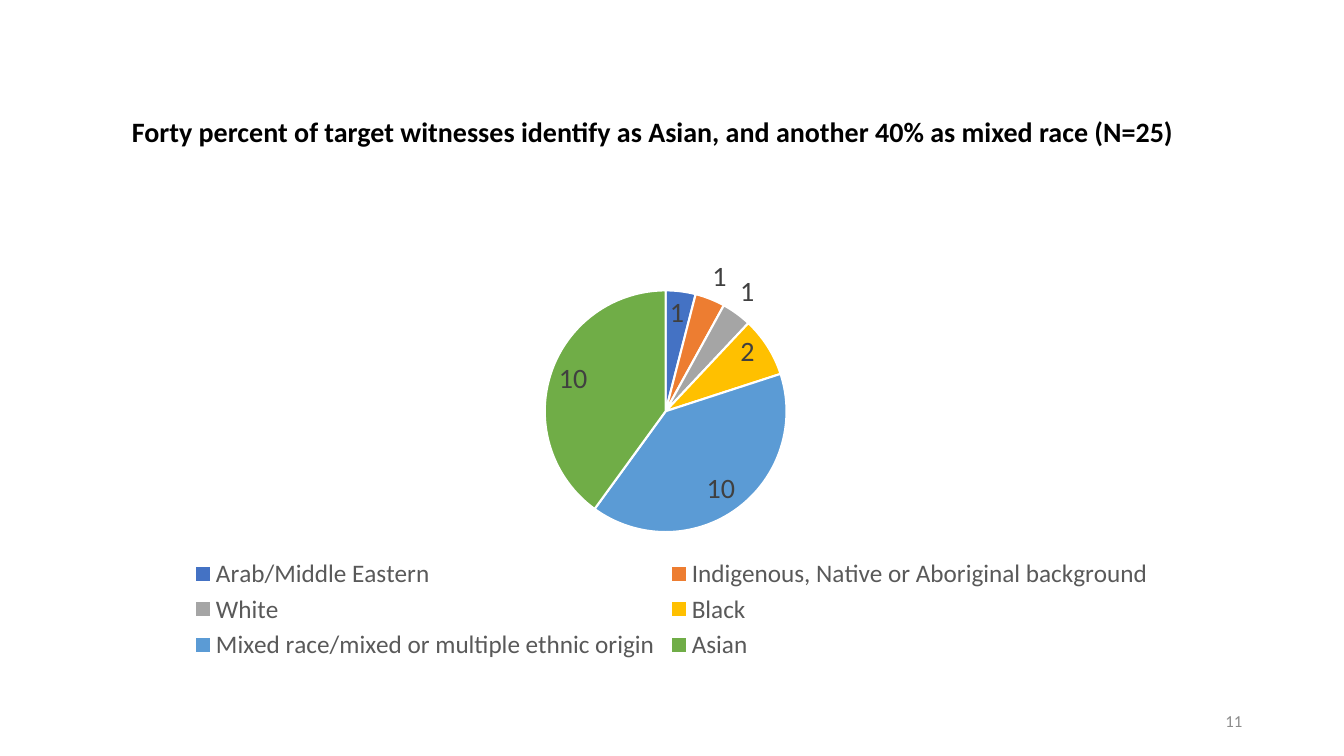
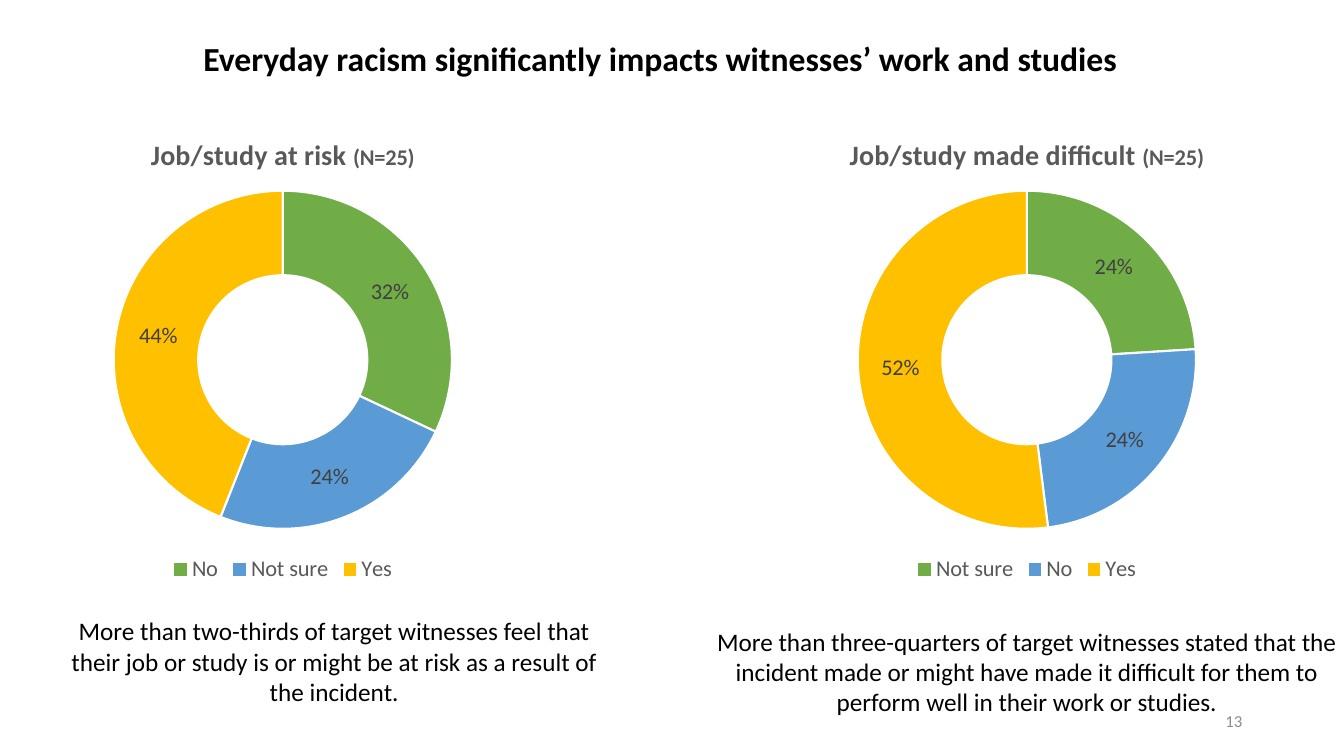
"""Build two slides of survey charts: a pie of witness backgrounds and a pair of doughnuts."""
import pptx
import pptx.chart.data
import pptx.dml.color
import pptx.enum.chart
import pptx.enum.text
import pptx.oxml
import pptx.oxml.ns
import pptx.util

Inches = pptx.util.Inches
Pt = pptx.util.Pt
Anchor = pptx.enum.text.MSO_ANCHOR
Align = pptx.enum.text.PP_ALIGN
ChartType = pptx.enum.chart.XL_CHART_TYPE

FONT = "Calibri"
COLORS = {
    "black": "000000", "white": "FFFFFF", "legend": "595959", "label": "404040", "number": "8C8C8C",
    "indigo": "4472C4", "orange": "ED7D31", "gray": "A5A5A5", "gold": "FFC000",
    "blue": "5B9BD5", "green": "70AD47",
}
NUMBER_BOX = (9.42, 6.95, 3, 0.4)

BACKGROUND = {
    "title": "Forty percent of target witnesses identify as Asian, and another 40% as mixed race (N=25)",
    "box": (0.91, 2.34, 11.5, 4.26),
    "slices": [
        ("Arab/Middle Eastern", 1, "indigo"),
        ("Indigenous, Native or Aboriginal background", 1, "orange"),
        ("White", 1, "gray"),
        ("Black", 2, "gold"),
        ("Mixed race/mixed or multiple ethnic origin", 10, "blue"),
        ("Asian", 10, "green"),
    ],
    "plot": (0.39, 0.127, 0.21, 0.563),
}
IMPACT_TITLE = "Everyday racism significantly impacts witnesses’ work and studies"
IMPACT_PLOT = (0.19, 0.155, 0.62, 0.72)
IMPACTS = [
    {
        "heading": "Job/study at risk ",
        "box": (0.1, 1.17, 5.41, 4.66),
        "slices": [("No", 0.32, "green"), ("Not sure", 0.24, "blue"), ("Yes", 0.44, "gold")],
        "caption": "More than two-thirds of target witnesses feel that their job or study "
                   "is or might be at risk as a result of the incident.",
        "caption_box": (0.51, 6.06, 5.61, 1.01),
    },
    {
        "heading": "Job/study made difficult ",
        "box": (7.48, 1.17, 5.41, 4.66),
        "slices": [("Not sure", 0.24, "green"), ("No", 0.24, "blue"), ("Yes", 0.52, "gold")],
        "caption": "More than three-quarters of target witnesses stated that the incident made "
                   "or might have made it difficult for them to perform well in their work or studies.",
        "caption_box": (6.85, 6.16, 6.67, 1.01),
    },
]


def rgb(name):
    return pptx.dml.color.RGBColor.from_string(COLORS[name])


def style_font(font, size, color, bold=False):
    font.name, font.size, font.bold = FONT, Pt(size), bold
    font.color.rgb = rgb(color)


def fill_text(shape, box, text, size, color="black", bold=False, align=Align.CENTER, anchor=Anchor.TOP):
    shape.left, shape.top, shape.width, shape.height = map(Inches, box)
    frame = shape.text_frame
    frame.text = text
    frame.word_wrap = True
    frame.auto_size = pptx.enum.text.MSO_AUTO_SIZE.NONE
    frame.vertical_anchor = anchor
    paragraph = frame.paragraphs[0]
    paragraph.alignment = align
    style_font(paragraph.runs[0].font, size, color, bold)
    return paragraph


def add_text(slide, box, text, size, **style):
    return fill_text(slide.shapes.add_textbox(*map(Inches, box)), box, text, size, **style)


def add_titled_slide(presentation, title, box, size, number, anchor=Anchor.TOP):
    slide = presentation.slides.add_slide(presentation.slide_layouts[5])
    paragraph = fill_text(slide.shapes.title, box, title, size, bold=True, anchor=anchor)
    add_text(slide, NUMBER_BOX, number, 12, color="number", align=Align.RIGHT, anchor=Anchor.MIDDLE)
    return slide, paragraph


def place_plot(chart, fractions):
    plot_area = chart.plots[0]._element.getparent()
    for layout in plot_area.findall(pptx.oxml.ns.qn("c:layout")):
        plot_area.remove(layout)
    sizes = "".join(f'<c:{key} val="{value}"/>' for key, value in zip("xywh", fractions))
    plot_area.insert(0, pptx.oxml.parse_xml(
        f'<c:layout {pptx.oxml.ns.nsdecls("c")}><c:manualLayout><c:layoutTarget val="inner"/>'
        f'<c:xMode val="edge"/><c:yMode val="edge"/>{sizes}</c:manualLayout></c:layout>'))


def add_round_chart(slide, kind, box, slices, plot_box, legend_size, label_size, number_format):
    data = pptx.chart.data.CategoryChartData(number_format=number_format)
    data.categories = [name for name, _, _ in slices]
    data.add_series("Series 1", [value for _, value, _ in slices])
    chart = slide.shapes.add_chart(kind, *map(Inches, box), data).chart
    style_font(chart.font, 10, "black")
    chart.has_title = False
    chart.has_legend = True
    chart.legend.position = pptx.enum.chart.XL_LEGEND_POSITION.BOTTOM
    chart.legend.include_in_layout = False
    style_font(chart.legend.font, legend_size, "legend")

    plot = chart.plots[0]
    plot.vary_by_categories = True
    for index, (_, _, color) in enumerate(slices):
        point = plot.series[0].points[index]
        point.format.fill.solid()
        point.format.fill.fore_color.rgb = rgb(color)
        point.format.line.color.rgb = rgb("white")
        point.format.line.width = Pt(1.5)
    labels = plot.series[0].data_labels
    labels.show_value = True
    labels.show_percentage = False
    labels.number_format = number_format
    labels.number_format_is_linked = False
    style_font(labels.font, label_size, "label")
    if kind == ChartType.PIE:
        labels.position = pptx.enum.chart.XL_LABEL_POSITION.BEST_FIT
    place_plot(chart, plot_box)
    return chart


def add_impact(slide, impact):
    chart = add_round_chart(slide, ChartType.DOUGHNUT, impact["box"], impact["slices"],
                            IMPACT_PLOT, 16, 16, "0%")
    chart.plots[0]._element.find(pptx.oxml.ns.qn("c:holeSize")).set("val", "75")
    paragraph = chart.chart_title.text_frame.paragraphs[0]
    for text, size in ((impact["heading"], 20), ("(N=25)", 16)):
        run = paragraph.add_run()
        run.text = text
        style_font(run.font, size, "legend", True)
    chart.chart_title.include_in_layout = False
    add_text(slide, impact["caption_box"], impact["caption"], 18)


def main():
    presentation = pptx.Presentation()
    presentation.slide_width, presentation.slide_height = Inches(13.33), Inches(7.5)

    slide, paragraph = add_titled_slide(presentation, BACKGROUND["title"], (0.91, 0.9, 11.13, 0.84),
                                        20, "11", Anchor.MIDDLE)
    paragraph.line_spacing = 0.9
    paragraph.space_after = Pt(6)
    add_round_chart(slide, ChartType.PIE, BACKGROUND["box"], BACKGROUND["slices"],
                    BACKGROUND["plot"], 18, 20, "General")

    slide, _ = add_titled_slide(presentation, IMPACT_TITLE, (0, 0.33, 13.1, 0.5), 24, "13")
    for impact in IMPACTS:
        add_impact(slide, impact)
    presentation.save("out.pptx")


if __name__ == "__main__":
    main()
